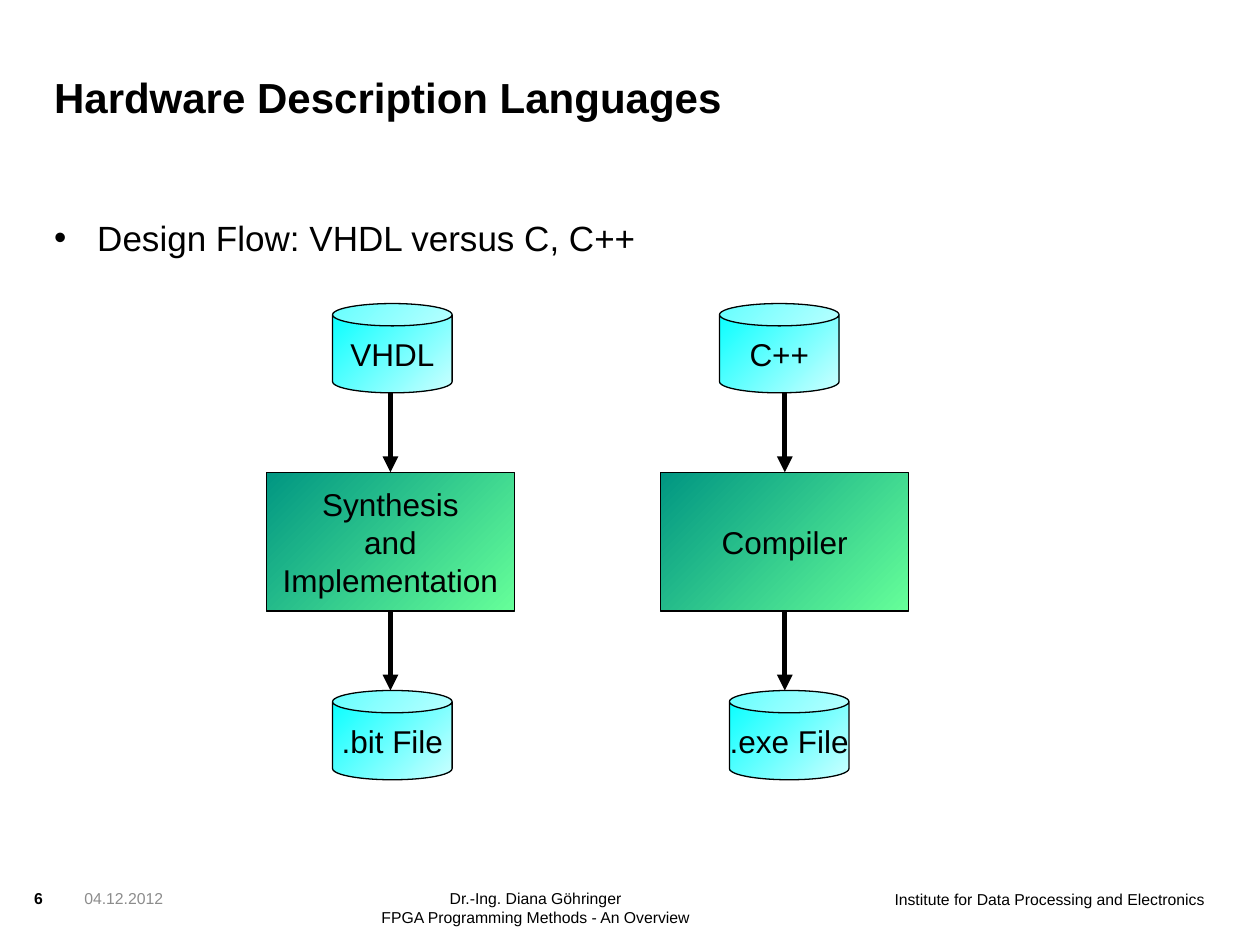
"""Build a slide comparing the VHDL and C++ design flows."""
from lxml import etree
from pptx import Presentation
from pptx.dml.color import RGBColor
from pptx.enum.shapes import MSO_CONNECTOR, MSO_SHAPE
from pptx.enum.text import MSO_ANCHOR, MSO_AUTO_SIZE, PP_ALIGN
from pptx.oxml.ns import qn
from pptx.util import Cm, Pt

LEFT, CENTER, RIGHT = PP_ALIGN.LEFT, PP_ALIGN.CENTER, PP_ALIGN.RIGHT
TOP, MIDDLE, BOTTOM = MSO_ANCHOR.TOP, MSO_ANCHOR.MIDDLE, MSO_ANCHOR.BOTTOM
CAN, RECTANGLE = MSO_SHAPE.CAN, MSO_SHAPE.RECTANGLE
STRAIGHT = MSO_CONNECTOR.STRAIGHT
NO_AUTOFIT = MSO_AUTO_SIZE.NONE

COLORS = {
    "black": "000000", "gray": "8C8C8C",
    "cyan": "00FFFF", "pale cyan": "CCFFFF",
    "teal": "009682", "mint": "66FF99",
}
GRADIENTS = {CAN: ("cyan", "pale cyan"), RECTANGLE: ("teal", "mint")}
SIZES = {CAN: (2.41, 1.8), RECTANGLE: (5, 2.8)}

TITLE = ["Hardware Description Languages"]
BULLETS = ["Design Flow: VHDL versus C, C++"]
FLOWS = [
    {"center": 7.87, "source": ["VHDL"], "source_shift": 0.04,
     "tool": ["Synthesis", "and", "Implementation"],
     "result": [".bit File"], "result_shift": 0.04},
    {"center": 15.82, "source": ["C++"], "source_shift": -0.11,
     "tool": ["Compiler"],
     "result": [".exe File"], "result_shift": 0.09},
]
FOOTERS = [
    (["6"], (0.69, 17.91, 0.91, 0.61), LEFT, {"bold": True}),
    (["Institute for Data Processing and Electronics"],
     (16.69, 17.94, 7.59, 0.99), RIGHT, {}),
    (["04.12.2012"], (1.7, 17.91, 2.9, 0.99), LEFT, {"color": "gray"}),
    (["Dr.-Ing. Diana Göhringer", "FPGA Programming Methods - An Overview"],
     (4.09, 17.91, 13.41, 0.99), CENTER, {}),
]
FLOW_TOP, ARROW_LENGTH = 6.12, 1.6
NO_MARGINS = dict.fromkeys(
    ("margin_left", "margin_top", "margin_right", "margin_bottom"), 0)


def set_attributes(target, values):
    for name, value in values.items():
        setattr(target, name, value)


def rgb(name):
    return RGBColor.from_string(COLORS[name])


def write_text(shape, lines, size, alignment, frame_format, color="black", bold=False):
    frame = shape.text_frame
    set_attributes(frame, {"auto_size": NO_AUTOFIT, **frame_format})
    frame.text = "\n".join(lines)
    for paragraph in frame.paragraphs:
        set_attributes(paragraph, {"alignment": alignment, "space_before": Pt(0)})
        font = paragraph.runs[0].font
        set_attributes(font, {"name": "Arial", "size": Pt(size), "bold": bold})
        font.color.rgb = rgb(color)


def place(shape, box):
    set_attributes(shape, dict(zip(("left", "top", "width", "height"), map(Cm, box))))


def add_bullets(shape):
    for paragraph in shape.text_frame.paragraphs:
        properties = paragraph._p.get_or_add_pPr()
        properties.set("marL", str(Cm(0.87)))
        properties.set("indent", str(-Cm(0.87)))
        etree.SubElement(properties, qn("a:buFont"), typeface="Arial")
        etree.SubElement(properties, qn("a:buChar"), char="•")


def add_node(slide, kind, center, top, lines):
    width, height = SIZES[kind]
    shape = slide.shapes.add_shape(
        kind, Cm(center - width / 2), Cm(top), Cm(width), Cm(height))
    shape.shadow.inherit = False
    shape.fill.gradient()
    shape.fill.gradient_angle = 315
    for stop, color in zip(shape.fill.gradient_stops, GRADIENTS[kind]):
        stop.color.rgb = rgb(color)
    shape.line.color.rgb = rgb("black")
    shape.line.width = Pt(0.75)
    write_text(shape, lines, 18, CENTER,
               {"word_wrap": False, "vertical_anchor": MIDDLE})
    return shape


def add_arrow(slide, center, top):
    arrow = slide.shapes.add_connector(
        STRAIGHT, Cm(center), Cm(top), Cm(center), Cm(top + ARROW_LENGTH))
    arrow.line.color.rgb = rgb("black")
    arrow.line.width = Pt(3)
    etree.SubElement(arrow.line._get_or_add_ln(), qn("a:tailEnd"), type="triangle")
    etree.SubElement(arrow._element.spPr, qn("a:effectLst"))
    return arrow


def add_flow(slide, flow):
    center = flow["center"]
    source_bottom = FLOW_TOP + SIZES[CAN][1]
    tool_top = source_bottom + ARROW_LENGTH
    tool_bottom = tool_top + SIZES[RECTANGLE][1]
    add_node(slide, CAN, center + flow["source_shift"], FLOW_TOP, flow["source"])
    tool = add_node(slide, RECTANGLE, center, tool_top, flow["tool"])
    add_node(slide, CAN, center + flow["result_shift"],
             tool_bottom + ARROW_LENGTH, flow["result"])
    add_arrow(slide, center, source_bottom).end_connect(tool, 0)
    add_arrow(slide, center, tool_bottom).begin_connect(tool, 2)


def main():
    presentation = Presentation()
    set_attributes(presentation, {"slide_width": Cm(25.4), "slide_height": Cm(19.05)})
    slide = presentation.slides.add_slide(presentation.slide_layouts[1])
    title, body = slide.placeholders
    place(title, (1.09, 0.91, 19.2, 1.55))
    write_text(title, TITLE, 24, LEFT,
               {**NO_MARGINS, "vertical_anchor": BOTTOM}, bold=True)
    place(body, (1.09, 4.37, 23.22, 12.55))
    write_text(body, BULLETS, 20, LEFT, {**NO_MARGINS, "vertical_anchor": TOP})
    add_bullets(body)
    for flow in FLOWS:
        add_flow(slide, flow)
    for lines, box, alignment, font_format in FOOTERS:
        footer = slide.shapes.add_textbox(*map(Cm, box))
        write_text(footer, lines, 9, alignment,
                   {**NO_MARGINS, "word_wrap": True}, **font_format)
    presentation.save("out.pptx")


if __name__ == "__main__":
    main()
